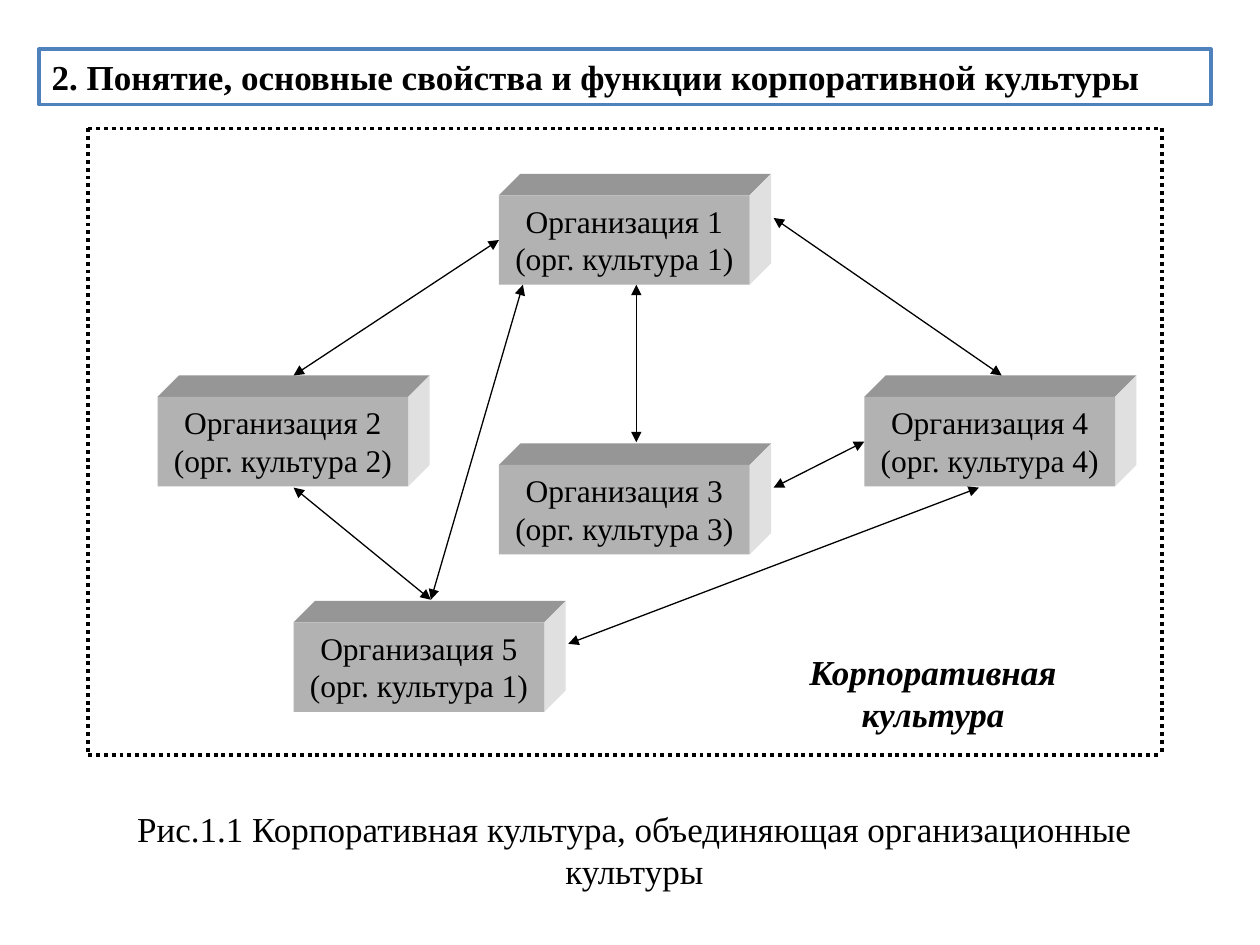
from lxml.etree import SubElement
from pptx import Presentation
from pptx.dml.color import RGBColor
from pptx.enum.dml import MSO_LINE
from pptx.enum.shapes import MSO_CONNECTOR, MSO_SHAPE
from pptx.enum.text import MSO_ANCHOR, PP_ALIGN
from pptx.oxml.ns import qn
from pptx.util import Inches, Pt

COLORS = {"text": "000000", "paper": "FFFFFF", "border": "4F81BD",
          "front": "B2B2B2", "top": "969696", "side": "E0E0E0"}
FONT = "Times New Roman"
BLOCK_WIDTH, BLOCK_HEIGHT, DEPTH = 1.99, 0.71, 0.17
ORGANIZATIONS = {
    1: (3.96, 1.55, "(орг. культура 1)"),
    2: (1.25, 3.15, "(орг. культура 2)"),
    3: (3.96, 3.69, "(орг. культура 3)"),
    4: (6.86, 3.15, "(орг. культура 4)"),
    5: (2.33, 4.94, "(орг. культура 1)"),
}
ARROWS = [
    ((5.05, 2.26), (5.05, 3.51)),
    ((3.96, 1.91), (2.33, 2.98)),
    ((6.14, 1.73), (7.95, 2.98)),
    ((4.15, 2.26), (3.42, 4.76)),
    ((4.51, 5.11), (7.77, 3.87)),
    ((6.14, 3.87), (6.86, 3.51)),
    ((2.33, 3.87), (3.42, 4.76)),
]


def color(name):
    """Return the named palette colour."""
    return RGBColor.from_string(COLORS[name])


def paint(shape, name):
    """Give a shape a plain fill with no outline or shadow."""
    shape.shadow.inherit = False
    shape.fill.solid()
    shape.fill.fore_color.rgb = color(name)
    shape.line.fill.background()


def write(shape, lines, size, align=PP_ALIGN.CENTER, bold=False, italic=False):
    """Write one paragraph per line into a shape."""
    frame = shape.text_frame
    frame.word_wrap = True
    frame.vertical_anchor = MSO_ANCHOR.TOP
    frame.text = "\n".join(lines)
    for para in frame.paragraphs:
        para.alignment = align
        font = para.font
        font.name, font.size = FONT, Pt(size)
        font.bold, font.italic = bold, italic
        font.color.rgb = color("text")


def add_title(page, left, top, width, height):
    """Place the outlined slide title."""
    title = page.shapes.title
    title.left, title.top = Inches(left), Inches(top)
    title.width, title.height = Inches(width), Inches(height)
    title.fill.solid()
    title.fill.fore_color.rgb = color("paper")
    title.line.color.rgb = color("border")
    title.line.width = Pt(2)
    write(title, ["2. Понятие, основные свойства и функции корпоративной культуры"],
          20, PP_ALIGN.LEFT, bold=True)


def add_label(page, left, top, width, height, lines, **style):
    """Place a centred text box."""
    box = page.shapes.add_textbox(Inches(left), Inches(top), Inches(width), Inches(height))
    write(box, lines, 20, **style)


def add_face(page, points, name):
    """Draw one slanted face of a block."""
    corners = [(Inches(x), Inches(y)) for x, y in points]
    builder = page.shapes.build_freeform(*corners[0])
    builder.add_line_segments(corners[1:])
    paint(builder.convert_to_shape(), name)


def add_block(page, left, top, width, height, lines):
    """Draw a raised block and return its front."""
    right, bottom = left + width, top + height
    add_face(page, [(left, top), (left + DEPTH, top - DEPTH),
                    (right + DEPTH, top - DEPTH), (right, top)], "top")
    add_face(page, [(right, top), (right + DEPTH, top - DEPTH),
                    (right + DEPTH, bottom - DEPTH), (right, bottom)], "side")
    front = page.shapes.add_shape(MSO_SHAPE.RECTANGLE, Inches(left), Inches(top),
                                  Inches(width), Inches(height))
    paint(front, "front")
    write(front, lines, 18)
    return front


def add_line(page, start, end, width):
    """Draw a straight black line."""
    line = page.shapes.add_connector(MSO_CONNECTOR.STRAIGHT,
                                     *(Inches(value) for value in start + end))
    line.line.color.rgb = color("text")
    line.line.width = Pt(width)
    SubElement(line._element.spPr, qn("a:effectLst"))
    return line


def add_arrow(page, start, end):
    """Draw a line with an arrowhead at both ends."""
    arrow = add_line(page, start, end, 0.75)
    for tag in ("a:headEnd", "a:tailEnd"):
        SubElement(arrow.line._get_or_add_ln(), qn(tag), type="triangle")
    return arrow


def add_frame(page, left, top, width, height):
    """Draw the dotted frame from four lines."""
    right, bottom = left + width, top + height
    for start, end in [((left, top), (right, top)), ((left, top), (left, bottom)),
                       ((right, top), (right, bottom)), ((left, bottom), (right, bottom))]:
        add_line(page, start, end, 2.25).line.dash_style = MSO_LINE.ROUND_DOT


def add_diagram(page, left, top, width, height):
    """Draw the organizations and their links inside the frame."""
    fronts = {number: add_block(page, x, y, BLOCK_WIDTH, BLOCK_HEIGHT,
                                [f"Организация {number}", culture])
              for number, (x, y, culture) in ORGANIZATIONS.items()}
    arrows = [add_arrow(page, start, end) for start, end in ARROWS]
    arrows[1].begin_connect(fronts[1], 1)
    arrows[5].end_connect(fronts[4], 1)
    add_label(page, left + width - 2.9, top + height - 0.88, 2.17, 0.71,
              ["Корпоративная", "культура"], bold=True, italic=True)
    add_frame(page, left, top, width, height)


def main():
    """Build and save the slide."""
    deck = Presentation()
    deck.slide_width, deck.slide_height = Inches(10), Inches(7.5)
    page = deck.slides.add_slide(deck.slide_layouts[5])
    add_title(page, 0.31, 0.39, 9.3, 0.44)
    add_diagram(page, 0.7, 1.02, 8.52, 4.97)
    add_label(page, 0.62, 6.36, 8.83, 0.51,
              ["Рис.1.1 Корпоративная культура, объединяющая организационные культуры"])
    deck.save("out.pptx")


if __name__ == "__main__":
    main()
